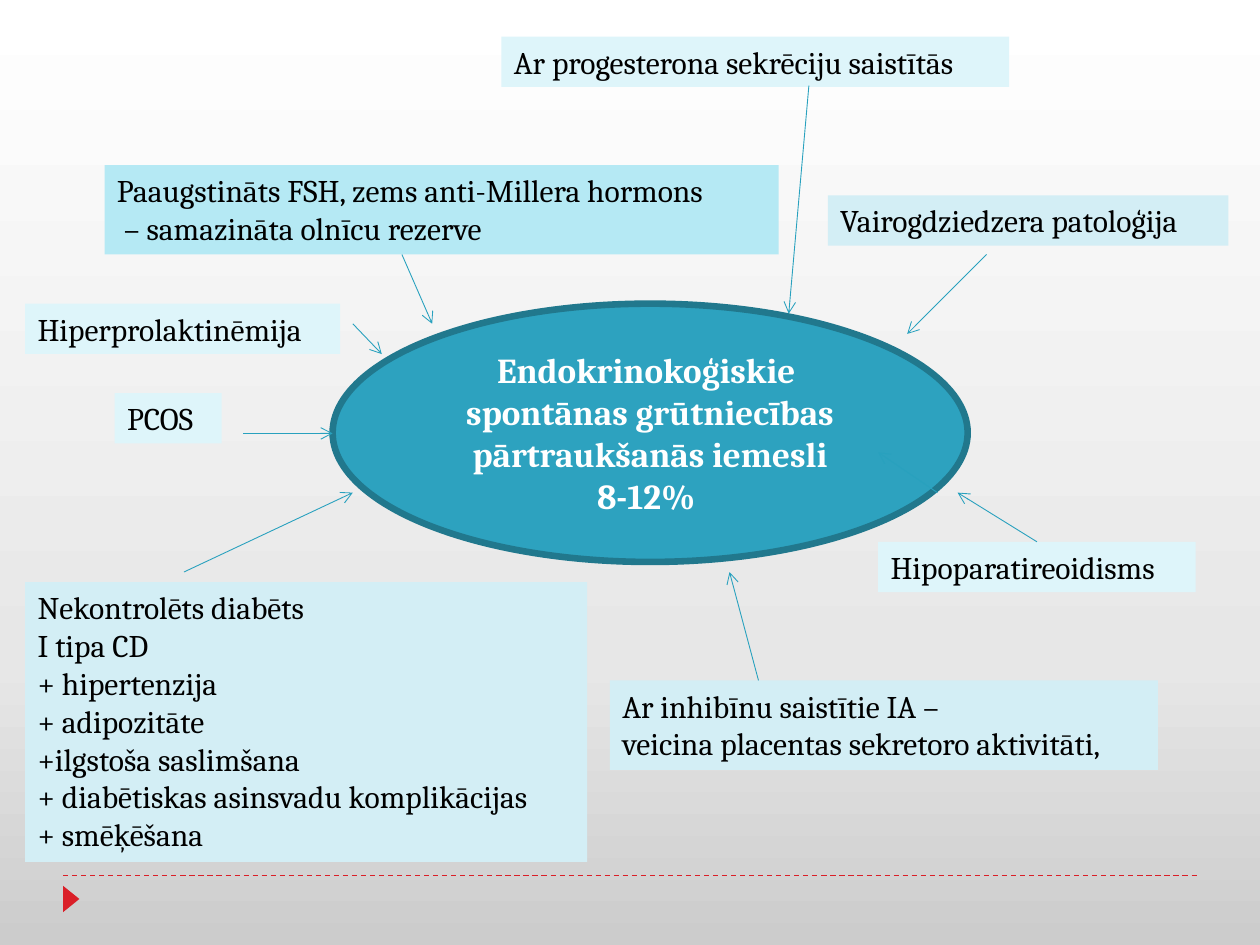
from copy import deepcopy

from lxml import etree
from pptx import Presentation
from pptx.dml.color import RGBColor
from pptx.enum.dml import MSO_LINE
from pptx.enum.shapes import MSO_CONNECTOR, MSO_SHAPE
from pptx.enum.text import MSO_ANCHOR, PP_ALIGN
from pptx.oxml.ns import qn
from pptx.util import Inches, Pt

STRAIGHT = MSO_CONNECTOR.STRAIGHT
RECTANGLE, ELLIPSE = MSO_SHAPE.RECTANGLE, MSO_SHAPE.OVAL
TRIANGLE = MSO_SHAPE.ISOSCELES_TRIANGLE
DASH = MSO_LINE.DASH
LEFT, CENTER = PP_ALIGN.LEFT, PP_ALIGN.CENTER
TOP, MIDDLE = MSO_ANCHOR.TOP, MSO_ANCHOR.MIDDLE

FONT = "Cambria"
COLORS = {
    "red": "DA1F28",
    "teal": "2DA2BF",
    "rim": "21788D",
    "arrow": "28A1BE",
    "pale": "DEF5FA",
    "light": "D3EEF5",
    "aqua": "B5E9F4",
    "black": "000000",
    "white": "FFFFFF",
}
BACKGROUND = [(0, "CCCCCC"), (0.3, "E7E7E7"), (1, "FFFFFF")]

CENTER_BOX = (2.64, 2.41, 5.04, 2.05)
CENTER_LINES = [
    "Endokrinokoģiskie ",
    "spontānas grūtniecības pārtraukšanās iemesli",
    "8-12% ",
]
CAUSES = [
    ((3.98, 0.29, 4.03, 0.4), "pale", ["Ar progesterona sekrēciju saistītās"]),
    ((0.2, 2.41, 2.5, 0.4), "pale", ["Hiperprolaktinēmija"]),
    ((0.91, 3.12, 0.85, 0.4), "pale", ["PCOS"]),
    ((6.57, 1.55, 3.18, 0.4), "light", ["Vairogdziedzera patoloģija"]),
    ((6.97, 4.3, 2.52, 0.4), "pale", ["Hipoparatireoidisms"]),
    ((0.2, 4.62, 4.46, 2.22), "light", [
        "Nekontrolēts diabēts",
        "I tipa CD",
        "+ hipertenzija",
        "+ adipozitāte",
        "+ilgstoša saslimšana",
        "+ diabētiskas asinsvadu komplikācijas",
        "+ smēķēšana",
    ]),
    ((0.83, 1.31, 5.35, 0.71), "aqua", [
        "Paaugstināts FSH, zems anti-Millera hormons",
        " – samazināta olnīcu rezerve",
    ]),
    ((4.84, 5.4, 4.35, 0.71), "light", [
        "Ar inhibīnu saistītie IA –",
        "veicina placentas sekretoro aktivitāti,",
    ]),
]
ARROWS = [
    ((3.19, 2.02), (3.43, 2.57)),
    ((7.44, 3.91), (6.97, 3.59)),
    ((6.02, 5.4), (5.79, 4.54)),
    ((1.46, 4.54), (2.8, 3.91)),
    ((8.23, 4.3), (7.6, 3.91)),
    ((7.83, 2.02), (7.2, 2.65)),
    ((6.42, 0.68), (6.26, 2.49)),
    ((2.8, 2.57), (3.03, 2.81)),
    ((1.93, 3.44), (2.64, 3.44)),
]


def rgb(name):
    return RGBColor.from_string(COLORS[name])


def set_background(page):
    fill = page.background.fill
    fill.gradient()
    fill.gradient_angle = 90
    stop_list = page.element.find(".//" + qn("a:gsLst"))
    stop_list.append(deepcopy(stop_list[0]))
    for stop, (position, color) in zip(fill.gradient_stops, BACKGROUND):
        stop.position = position
        stop.color.rgb = RGBColor.from_string(color)


def add_filled(page, kind, box, color):
    shape = page.shapes.add_shape(kind, *map(Inches, box))
    shape.shadow.inherit = False
    shape.fill.solid()
    shape.fill.fore_color.rgb = rgb(color)
    shape.line.fill.background()
    return shape


def add_line(page, start, end, color, width):
    line = page.shapes.add_connector(STRAIGHT, *map(Inches, start + end))
    line.line.color.rgb = rgb(color)
    line.line.width = Pt(width)
    etree.SubElement(line.element.spPr, qn("a:effectLst"))
    return line


def write_lines(shape, lines, size, color, align, anchor, bold=False):
    frame = shape.text_frame
    frame.word_wrap = True
    frame.vertical_anchor = anchor
    frame.text = "\n".join(lines)
    for para in frame.paragraphs:
        para.alignment = align
        para.font.name = FONT
        para.font.size = Pt(size)
        para.font.bold = bold
        para.font.color.rgb = rgb(color)


def add_footer(page, left, top, width):
    rule = add_line(page, (left, top), (left + width, top), "red", 0.75)
    rule.line.dash_style = DASH
    marker = add_filled(page, TRIANGLE, (left - 0.04, top + 0.12, 0.21, 0.13), "red")
    marker.rotation = 90


def add_topic(page, box, lines):
    topic = add_filled(page, ELLIPSE, box, "teal")
    topic.line.color.rgb = rgb("rim")
    topic.line.width = Pt(3.78)
    write_lines(topic, lines, 20, "white", CENTER, MIDDLE, bold=True)


def add_cause(page, box, color, lines):
    cause = add_filled(page, RECTANGLE, box, color)
    write_lines(cause, lines, 18, "black", LEFT, TOP)


def add_arrow(page, start, end):
    arrow = add_line(page, start, end, "arrow", 0.5)
    etree.SubElement(arrow.line._get_or_add_ln(), qn("a:tailEnd"), type="arrow")


def main():
    deck = Presentation()
    deck.slide_width, deck.slide_height = Inches(10), Inches(7.5)
    page = deck.slides.add_slide(deck.slide_layouts[6])
    set_background(page)
    add_footer(page, 0.5, 6.95, 9)
    add_topic(page, CENTER_BOX, CENTER_LINES)
    for box, color, lines in CAUSES:
        add_cause(page, box, color, lines)
    for start, end in ARROWS:
        add_arrow(page, start, end)
    deck.save("out.pptx")


if __name__ == "__main__":
    main()
